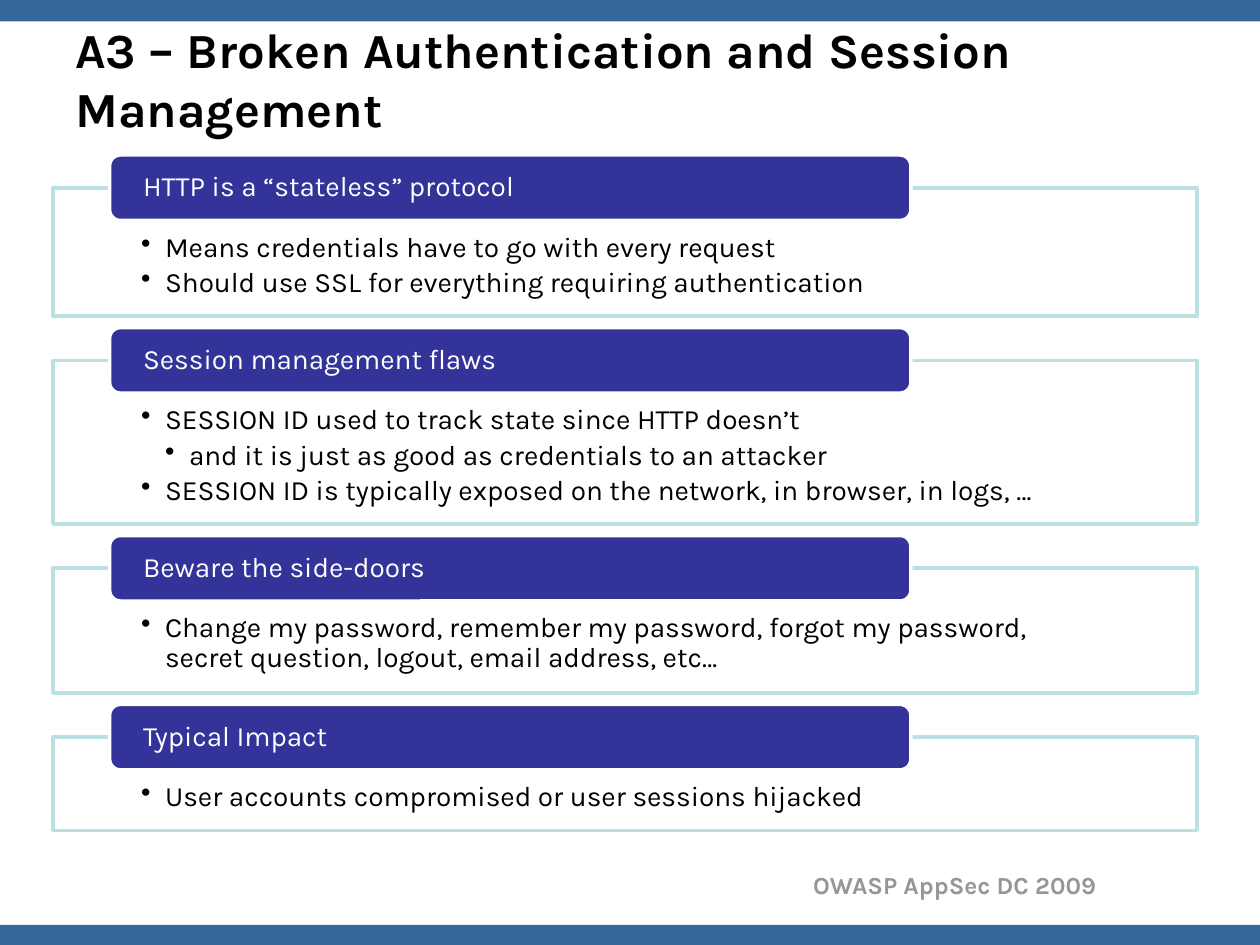
from lxml.etree import SubElement
from pptx import Presentation
from pptx.dml.color import RGBColor
from pptx.enum.shapes import MSO_SHAPE as Shape
from pptx.enum.text import MSO_ANCHOR as Anchor, PP_ALIGN as Align
from pptx.oxml.ns import qn
from pptx.util import Inches, Pt

COLUMNS, ROWS = 100, 75
GAP = 3.5           # rows between one panel and the next
HEADER_RISE = 2.6   # rows by which a header stands above its panel

# header, panel height in rows, bullets as (level, text)
SECTIONS = [
    ("HTTP is a “stateless” protocol", 10.2, [
        (1, "Means credentials have to go with every request"),
        (1, "Should use SSL for everything requiring authentication"),
    ]),
    ("Session management flaws", 13, [
        (1, "SESSION ID used to track state since HTTP doesn’t"),
        (2, "and it is just as good as credentials to an attacker"),
        (1, "SESSION ID is typically exposed on the network, in browser, in logs, …"),
    ]),
    ("Beware the side-doors", 9.9, [
        (1, "Change my password, remember my password, forgot my password, "
            "secret question, logout, email address, etc…"),
    ]),
    ("Typical Impact", 7.4, [
        (1, "User accounts compromised or user sessions hijacked"),
    ]),
]


def color(hex_text):
    return RGBColor.from_string(hex_text)


def apply(target, values):
    for name, value in values.items():
        setattr(target, name, value)


class SlideBuilder:
    font = "Karla"
    bar, header, border = "336699", "333399", "BBE0E3"
    white, black, gray = "FFFFFF", "000000", "969696"
    indent = 0.19

    def __init__(self, deck):
        self.column = deck.slide_width / COLUMNS
        self.row = deck.slide_height / ROWS
        self.page = deck.slides.add_slide(deck.slide_layouts[6])

    def place(self, left, top, width, height):
        return (round(left * self.column), round(top * self.row),
                round(width * self.column), round(height * self.row))

    def add_box(self, kind, area, fill, line=None):
        box = self.page.shapes.add_shape(kind, *self.place(*area))
        box.shadow.inherit = False
        box.fill.solid()
        box.fill.fore_color.rgb = color(fill)
        if line:
            box.line.color.rgb = color(line)
            box.line.width = Pt(2)
        else:
            box.line.fill.background()
        return box

    def set_frame(self, box, anchor, left, top, bottom):
        """Set wrapping, anchor and margins in inches; right equals left."""
        frame = box.text_frame
        apply(frame, {
            "word_wrap": True, "vertical_anchor": anchor,
            "margin_left": Inches(left), "margin_right": Inches(left),
            "margin_top": Inches(top), "margin_bottom": Inches(bottom),
        })
        return frame

    def add_text(self, para, text, size, hex_text, bold=False, **layout):
        apply(para, {"alignment": Align.LEFT, **layout})
        span = para.add_run()
        span.text = text
        apply(span.font, {"name": self.font, "size": Pt(size), "bold": bold})
        span.font.color.rgb = color(hex_text)

    def add_bar(self, top):
        self.add_box(Shape.RECTANGLE, (0, top, COLUMNS, 1.7), self.bar)

    def add_label(self, area, text, size, hex_text, anchor, align):
        box = self.page.shapes.add_textbox(*self.place(*area))
        frame = self.set_frame(box, anchor, 0.1, 0.05, 0.05)
        self.add_text(frame.paragraphs[0], text, size, hex_text, True,
                      alignment=align)

    def add_bullet(self, para, level):
        properties = para._p.get_or_add_pPr()
        properties.set("marL", str(Inches(self.indent * level)))
        properties.set("indent", str(-Inches(self.indent)))
        SubElement(properties, qn("a:buChar"), char="•")

    def add_panel(self, top, height, bullets):
        box = self.add_box(Shape.RECTANGLE, (4.2, top, 90.8, height),
                           self.white, self.border)
        tint = box.fill._xPr.find(qn("a:solidFill"))[0]
        SubElement(tint, qn("a:alpha"), val="90000")
        frame = self.set_frame(box, Anchor.TOP, 0.7, 0.36, 0.12)
        for number, (level, text) in enumerate(bullets):
            para = frame.add_paragraph() if number else frame.paragraphs[0]
            self.add_bullet(para, level)
            self.add_text(para, text, 16, self.black, level=level,
                          line_spacing=0.9, space_after=Pt(3))

    def add_header(self, top, text):
        box = self.add_box(Shape.ROUNDED_RECTANGLE, (8.7, top, 63.6, 5.2),
                           self.header, self.white)
        frame = self.set_frame(box, Anchor.MIDDLE, 0.24, 0, 0)
        self.add_text(frame.paragraphs[0], text, 16, self.white, line_spacing=0.9)


def main():
    deck = Presentation()
    deck.slide_width, deck.slide_height = Inches(10), Inches(7.5)
    slide = SlideBuilder(deck)
    for top in (0, 73.4):
        slide.add_bar(top)
    slide.add_label((54.2, 68.6, 33.8, 3.4), "OWASP AppSec DC 2009", 14,
                    slide.gray, Anchor.TOP, Align.RIGHT)
    slide.add_label((5, 1.9, 90, 8.7),
                    "A3 – Broken Authentication and Session Management", 28,
                    slide.black, Anchor.MIDDLE, Align.LEFT)
    top = 14.9
    for title, height, bullets in SECTIONS:
        slide.add_panel(top, height, bullets)
        slide.add_header(top - HEADER_RISE, title)
        top += height + GAP
    deck.save("out.pptx")


if __name__ == "__main__":
    main()
